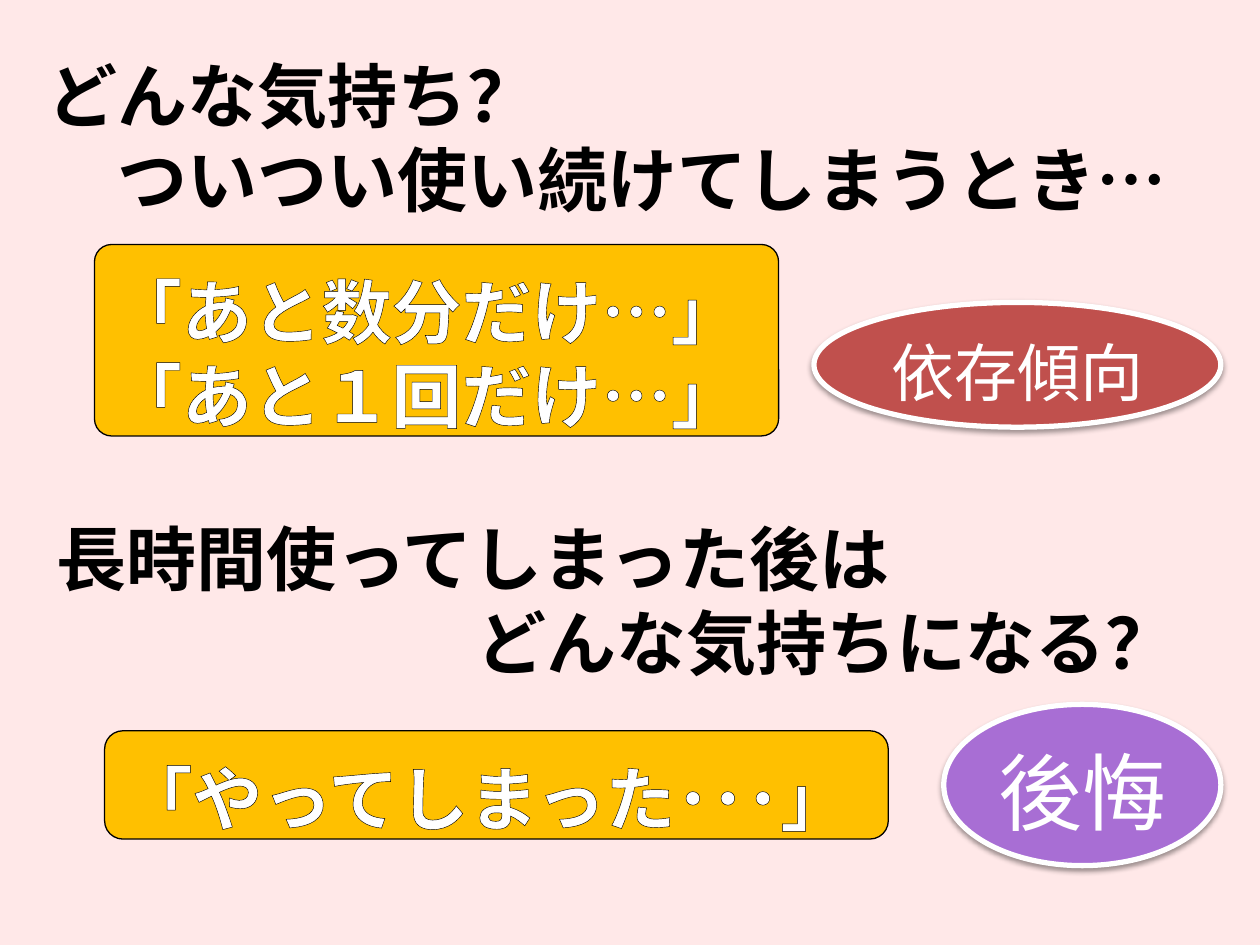
from lxml import etree
from pptx import Presentation
from pptx.dml.color import RGBColor
from pptx.enum import shapes, text
from pptx.oxml import parse_xml
from pptx.oxml.ns import qn
from pptx.util import Inches, Pt

FONT = "Noto Sans CJK JP"
NS = 'xmlns:a="http://schemas.openxmlformats.org/drawingml/2006/main"'


def rgb(value):
    return RGBColor.from_string(value)


def write(sp, lines, size=40, color="000000", bold=True, outline=None,
          indent=0, align=text.PP_ALIGN.LEFT, middle=True, wrap=True):
    """Set one paragraph per line; indent (in characters) moves the last one."""
    tf = sp.text_frame
    tf.word_wrap = wrap
    tf.margin_left = tf.margin_right = Inches(0.1)
    tf.margin_top, tf.margin_bottom = Inches(0.15), Inches(0.05)
    tf.vertical_anchor = text.MSO_ANCHOR.MIDDLE if middle else text.MSO_ANCHOR.TOP
    for i, line in enumerate(lines):
        p = tf.paragraphs[0] if i == 0 else tf.add_paragraph()
        p.alignment = align
        p.line_spacing = Pt(size * 1.2)
        r = p.add_run()
        r.text = line
        r.font.name, r.font.size, r.font.bold = FONT, Pt(size), bold
        r.font.color.rgb = rgb(color)
        rPr = r._r.get_or_add_rPr()
        rPr.find(qn("a:latin")).addnext(parse_xml(f'<a:ea {NS} typeface="{FONT}"/>'))
        if outline:
            rPr.insert(0, parse_xml(
                f'<a:ln {NS} w="3175"><a:solidFill><a:srgbClr val="{outline}"/>'
                '</a:solidFill></a:ln>'))
    if indent:
        pPr = p._p.get_or_add_pPr()
        pPr.set("marL", str(Pt(size * indent)))
        pPr.set("indent", "0")


def add_shape(s, kind, box, fill, line, width):
    sp = s.shapes.add_shape(kind, *map(Inches, box))
    sp.shadow.inherit = False
    sp.fill.solid()
    sp.fill.fore_color.rgb = rgb(fill)
    sp.line.color.rgb = rgb(line)
    sp.line.width = Pt(width)
    return sp


def heading(s, box, lines, indent):
    write(s.shapes.add_textbox(*map(Inches, box)), lines, indent=indent)


def quote_box(s, box, lines, corner):
    sp = add_shape(s, shapes.MSO_SHAPE.ROUNDED_RECTANGLE, box, "FFC000", "000000", 0.75)
    sp.adjustments[0] = corner
    write(sp, lines, color="FFFFFF", outline="000000", middle=False)


def feeling_oval(s, box, word, fill, size):
    sp = add_shape(s, shapes.MSO_SHAPE.OVAL, box, fill, "FFFFFF", 3)
    shadow = etree.SubElement(
        sp._element.spPr.find(qn("a:effectLst")), qn("a:outerShdw"),
        blurRad=str(Pt(3.1)), dist=str(Pt(1.6)), dir="5400000", rotWithShape="0")
    black = etree.SubElement(shadow, qn("a:srgbClr"), val="000000")
    etree.SubElement(black, qn("a:alpha"), val="38000")
    write(sp, [word], size=size, color="FFFFFF", bold=False,
          align=text.PP_ALIGN.CENTER, wrap=False)


def main():
    prs = Presentation()
    prs.slide_width, prs.slide_height = Inches(10), Inches(7.5)
    s = prs.slides.add_slide(prs.slide_layouts[6])
    s.background.fill.solid()
    s.background.fill.fore_color.rgb = rgb("FFE8E8")

    # While using: the urge to go on
    heading(s, (0.28, 0.21, 9.37, 1.65),
            ["どんな気持ち？", "ついつい使い続けてしまうとき…"], indent=1)
    quote_box(s, (0.75, 1.94, 5.43, 1.52),
              ["「あと数分だけ…」", "「あと１回だけ…」"], corner=0.09)
    feeling_oval(s, (6.46, 2.4, 3.23, 0.99), "依存傾向", "C0504D", 36)

    # Afterwards: regret
    heading(s, (0.35, 4.06, 10.24, 1.3),
            ["長時間使ってしまった後は", "どんな気持ちになる？"], indent=6)
    quote_box(s, (0.83, 5.8, 6.22, 0.86), ["「やってしまった･･･」"], corner=0.17)
    feeling_oval(s, (7.49, 5.59, 2.2, 1.28), "後悔", "A86ED4", 48)

    prs.save("out.pptx")


if __name__ == "__main__":
    main()
